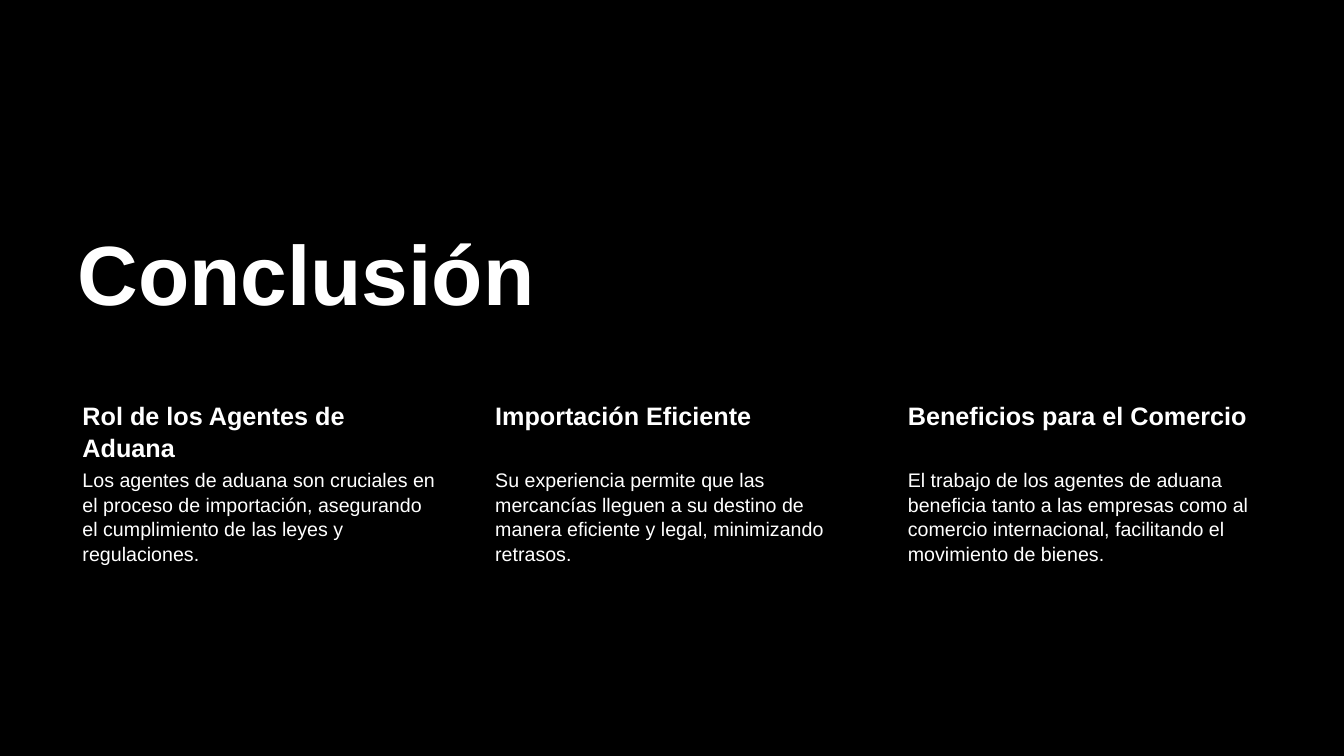
from pptx import Presentation
from pptx.dml.color import RGBColor
from pptx.enum import text
from pptx.util import Cm, Pt

BLACK = "000000"
WHITE = "FFFFFF"
LEFT = 1.7
COLUMN_PITCH = 10.4
COLUMN_WIDTH = 9.45

COLUMNS = [
    ("Rol de los Agentes de Aduana",
     "Los agentes de aduana son cruciales en el proceso de importación, "
     "asegurando el cumplimiento de las leyes y regulaciones."),
    ("Importación Eficiente",
     "Su experiencia permite que las mercancías lleguen a su destino de "
     "manera eficiente y legal, minimizando retrasos."),
    ("Beneficios para el Comercio",
     "El trabajo de los agentes de aduana beneficia tanto a las empresas "
     "como al comercio internacional, facilitando el movimiento de bienes."),
]


def set_color(color_format, value):
    color_format.rgb = RGBColor.from_string(value)


def format_paragraph(p, size, bold, line_spacing):
    p.alignment = text.PP_ALIGN.LEFT
    p.line_spacing = line_spacing
    for r in p.runs:
        r.font.name = "Arial"
        r.font.size = Pt(size)
        r.font.bold = bold
        set_color(r.font.color, WHITE)


def fill_title(slide, words):
    sp = slide.shapes.title
    sp.left, sp.top, sp.width, sp.height = Cm(LEFT), Cm(5.13), Cm(20.4), Cm(3.15)
    tf = sp.text_frame
    tf.text = words
    tf.vertical_anchor = text.MSO_ANCHOR.BOTTOM
    tf.auto_size = text.MSO_AUTO_SIZE.NONE
    format_paragraph(tf.paragraphs[0], 60, True, 0.9)


def add_text(shapes, words, left, top, height, inset, size, bold=False):
    sp = shapes.add_textbox(Cm(left), Cm(top), Cm(COLUMN_WIDTH), Cm(height))
    tf = sp.text_frame
    tf.text = words
    tf.word_wrap = True
    tf.margin_left = Cm(0.38)
    tf.margin_top = tf.margin_right = tf.margin_bottom = Cm(inset)
    format_paragraph(tf.paragraphs[0], size, bold, 1.05)


def add_column(slide, left, heading, body):
    group = slide.shapes.add_group_shape()
    add_text(group.shapes, heading, left, 9.98, 1.73, 0.08, 18, bold=True)
    add_text(group.shapes, body, left, 11.71, 5.23, 0.05, 14)


def main():
    prs = Presentation()
    prs.slide_width, prs.slide_height = Cm(33.87), Cm(19.05)
    title_only = prs.slide_layouts[5]
    slide = prs.slides.add_slide(title_only)
    slide.background.fill.solid()
    set_color(slide.background.fill.fore_color, BLACK)

    fill_title(slide, "Conclusión")
    for i, (heading, body) in enumerate(COLUMNS):
        add_column(slide, LEFT + i * COLUMN_PITCH, heading, body)

    prs.save("out.pptx")


if __name__ == "__main__":
    main()
